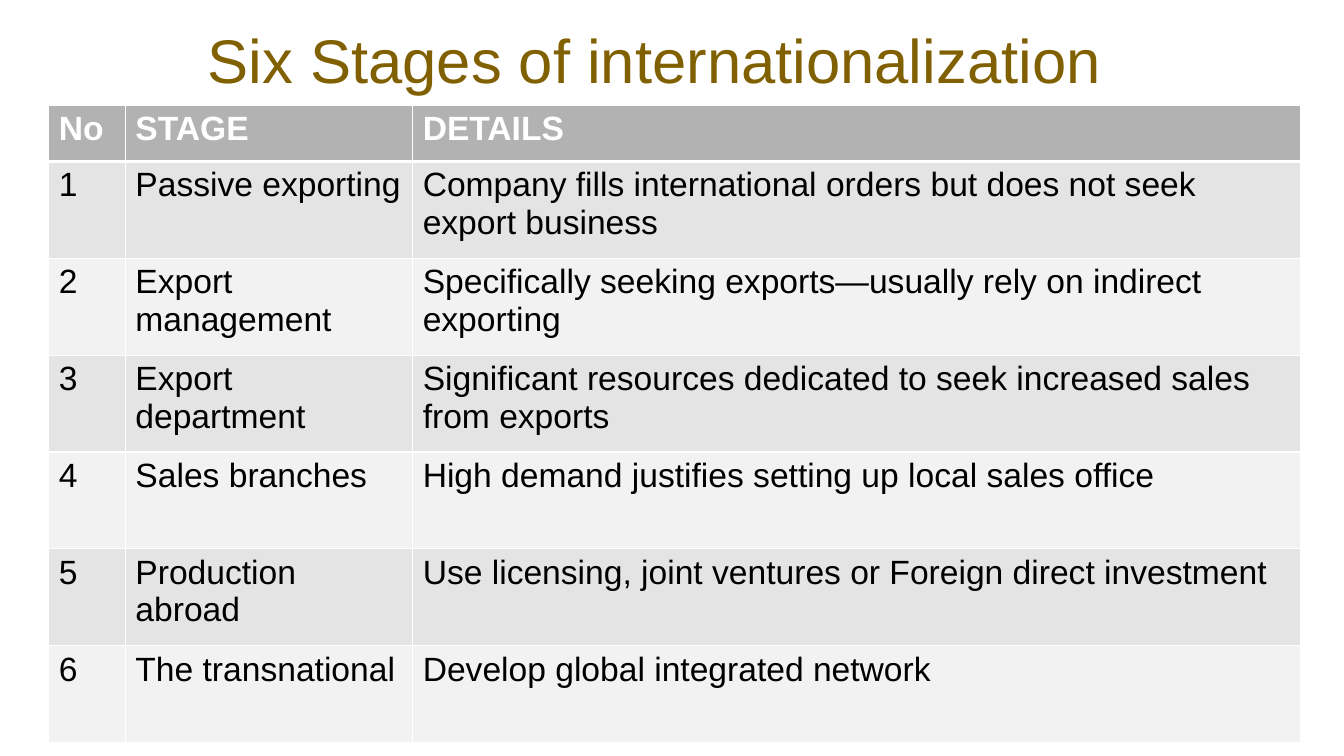
from lxml import etree
from pptx import Presentation
from pptx.dml.color import RGBColor
from pptx.enum.text import MSO_ANCHOR, PP_ALIGN
from pptx.oxml.ns import qn
from pptx.util import Cm, Pt

CENTER = PP_ALIGN.CENTER
LEFT = PP_ALIGN.LEFT
MIDDLE = MSO_ANCHOR.MIDDLE
TOP = MSO_ANCHOR.TOP

GOLD = RGBColor(0x80, 0x60, 0x00)
WHITE = RGBColor(0xFF, 0xFF, 0xFF)
BLACK = RGBColor(0x00, 0x00, 0x00)
GREY = RGBColor(0xB2, 0xB2, 0xB2)
BANDS = (RGBColor(0xE4, 0xE4, 0xE4), RGBColor(0xF2, 0xF2, 0xF2))

TITLE = {"name": "Arial", "size": Pt(44), "bold": False}
HEAD = {"name": "Arial", "size": Pt(24), "bold": True}
BODY = {"name": "Arial", "size": Pt(24), "bold": False}

WIDTHS = (1.93, 7.24, 22.38)
HEAD_H, ROW_H = 1.42, 2.44
STAGES = (
    ("No", "STAGE", "DETAILS"),
    ("1", "Passive exporting",
     "Company fills international orders but does not seek export business"),
    ("2", "Export management",
     "Specifically seeking exports—usually rely on indirect exporting"),
    ("3", "Export department",
     "Significant resources dedicated to seek increased sales from exports"),
    ("4", "Sales branches",
     "High demand justifies setting up local sales office"),
    ("5", "Production abroad",
     "Use licensing, joint ventures or Foreign direct investment"),
    ("6", "The transnational", "Develop global integrated network"),
)


def write(frame, text, style, color, align=LEFT):
    para = frame.paragraphs[0]
    para.alignment = align
    run = para.add_run()
    run.text = text
    for key, value in style.items():
        setattr(run.font, key, value)
    run.font.color.rgb = color


def add_title(slide, text):
    box = slide.shapes.add_textbox(Cm(2.13), Cm(0.33), Cm(28.75), Cm(2.31))
    frame = box.text_frame
    frame.word_wrap = True
    frame.vertical_anchor = MIDDLE
    write(frame, text, TITLE, GOLD, CENTER)


def add_rules(cell, top, bottom):
    props = cell._tc.get_or_add_tcPr()
    for side, size in (("L", 1), ("R", 1), ("T", top), ("B", bottom)):
        line = etree.SubElement(props, qn("a:ln" + side), w=str(Pt(size)))
        fill = etree.SubElement(line, qn("a:solidFill"))
        etree.SubElement(fill, qn("a:srgbClr"), val=str(WHITE))


def fill_cell(cell, row, text):
    # Borders come before the fill; a thick rule parts header and body
    add_rules(cell, 3 if row == 1 else 1, 3 if row == 0 else 1)
    cell.fill.solid()
    cell.fill.fore_color.rgb = BANDS[(row - 1) % 2] if row else GREY
    cell.vertical_anchor = TOP
    write(cell.text_frame, text, BODY if row else HEAD,
          BLACK if row else WHITE)


def add_grid(slide, rows):
    high = HEAD_H + ROW_H * (len(rows) - 1)
    table = slide.shapes.add_table(
        len(rows), len(WIDTHS), Cm(1.23), Cm(2.65),
        Cm(sum(WIDTHS)), Cm(high)).table
    for col, width in zip(table.columns, WIDTHS):
        col.width = Cm(width)
    for row, texts in enumerate(rows):
        table.rows[row].height = Cm(ROW_H if row else HEAD_H)
        for col, text in enumerate(texts):
            fill_cell(table.cell(row, col), row, text)


def main():
    deck = Presentation()
    deck.slide_width = Cm(33.87)
    deck.slide_height = Cm(19.05)
    slide = deck.slides.add_slide(deck.slide_layouts[6])

    # Heading
    add_title(slide, "Six Stages of internationalization")

    # Table of stages
    add_grid(slide, STAGES)

    deck.save("out.pptx")


if __name__ == "__main__":
    main()
